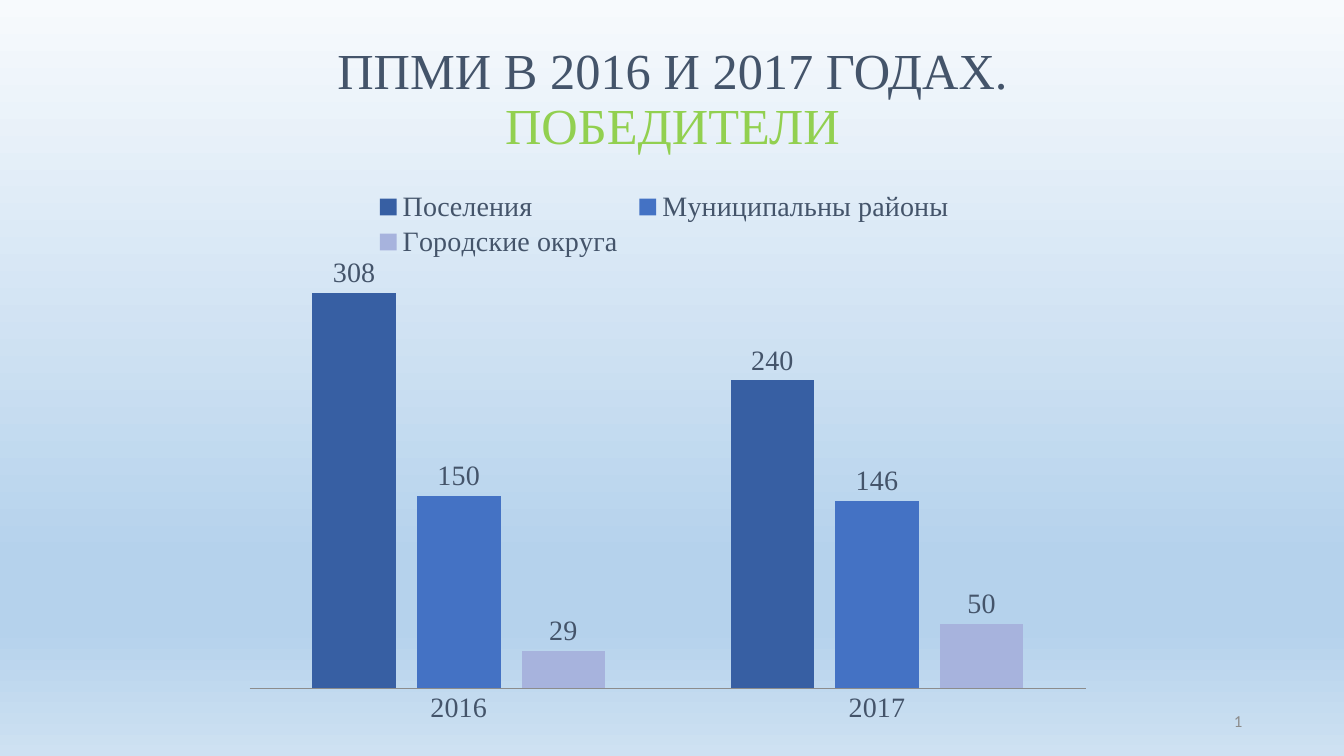
from pptx import Presentation
from pptx.chart.data import CategoryChartData
from pptx.dml.color import RGBColor
from pptx.enum.chart import XL_CHART_TYPE, XL_LABEL_POSITION, XL_LEGEND_POSITION, XL_TICK_MARK
from pptx.enum.text import MSO_ANCHOR, PP_ALIGN
from pptx.oxml import parse_xml
from pptx.oxml.ns import nsdecls, qn
from pptx.util import Inches, Pt

SERIF = "Times New Roman"
SLATE = "44546A"
BACKGROUND = [(0, "F7FAFD"), (74, "B5D2EC"), (83, "B5D2EC"), (100, "CEE1F2")]
YEARS = ["2016", "2017"]
WINNERS = [
    ("Поселения", (308, 240), "375FA3"),
    ("Муниципальны районы", (150, 146), "4472C4"),
    ("Городские округа", (29, 50), "A7B3DD"),
]


def rgb(color):
    return RGBColor.from_string(color)


def style_font(font, name, size, color):
    font.name = name
    font.size = Pt(size)
    font.color.rgb = rgb(color)


def paint_background(slide):
    fill = slide.background.fill
    fill.gradient()
    stops = "".join(
        f'<a:gs pos="{position * 1000}"><a:srgbClr val="{color}"/></a:gs>'
        for position, color in BACKGROUND
    )
    gradient = parse_xml(
        f'<a:gradFill {nsdecls("a")} rotWithShape="1"><a:gsLst>{stops}</a:gsLst>'
        '<a:lin ang="5400000" scaled="0"/></a:gradFill>'
    )
    default = slide.background._cSld.find(".//" + qn("a:gradFill"))
    default.getparent().replace(default, gradient)


def add_text_box(slide, left, top, width, height, anchor, align):
    """Add a wrapping text box and return its first paragraph."""
    box = slide.shapes.add_textbox(Inches(left), Inches(top), Inches(width), Inches(height))
    frame = box.text_frame
    frame.word_wrap = True
    frame.vertical_anchor = anchor
    paragraph = frame.paragraphs[0]
    paragraph.alignment = align
    return paragraph


def add_title(slide):
    title = add_text_box(slide, 1.72, 0.41, 9.9, 1.18, MSO_ANCHOR.BOTTOM, PP_ALIGN.CENTER)
    title.line_spacing = 0.9
    for words, color in (("ППМИ В 2016 И 2017 ГОДАХ. ", SLATE), ("ПОБЕДИТЕЛИ", "92D050")):
        run = title.add_run()
        run.text = words
        style_font(run.font, SERIF, 36, color)


def add_slide_number(slide):
    number = add_text_box(slide, 9.42, 6.95, 3, 0.4, MSO_ANCHOR.MIDDLE, PP_ALIGN.RIGHT)
    number._p.append(parse_xml(
        f'<a:fld {nsdecls("a")} id="{{B6F15528-21DE-4FAA-801E-634DDDAF4B2B}}" type="slidenum">'
        '<a:rPr lang="ru-RU" sz="1200"><a:solidFill><a:srgbClr val="8C8C8C"/></a:solidFill>'
        '<a:latin typeface="Calibri"/></a:rPr><a:t>2</a:t></a:fld>'
    ))


def set_layout(parent, index, target, x, y, w, h):
    """Fix a chart part at fractions of the chart's size."""
    for old in parent.findall(qn("c:layout")):
        parent.remove(old)
    inner = f'<c:layoutTarget val="{target}"/>' if target else ""
    parent.insert(index, parse_xml(
        f'<c:layout {nsdecls("c")}><c:manualLayout>{inner}'
        '<c:xMode val="edge"/><c:yMode val="edge"/>'
        f'<c:x val="{x}"/><c:y val="{y}"/><c:w val="{w}"/><c:h val="{h}"/>'
        '</c:manualLayout></c:layout>'
    ))


def add_winners_chart(slide):
    data = CategoryChartData()
    data.categories = YEARS
    for name, values, _ in WINNERS:
        data.add_series(name, values)
    chart = slide.shapes.add_chart(
        XL_CHART_TYPE.COLUMN_CLUSTERED,
        Inches(2.26), Inches(1.75), Inches(8.66), Inches(5.62), data,
    ).chart
    chart.has_title = False
    style_font(chart.font, SERIF, 20, SLATE)

    plot = chart.plots[0]
    plot.gap_width = 150
    plot.overlap = -25
    plot.vary_by_categories = False
    for series, (_, _, color) in zip(plot.series, WINNERS):
        series.format.fill.solid()
        series.format.fill.fore_color.rgb = rgb(color)
        labels = series.data_labels
        labels.show_value = True
        labels.position = XL_LABEL_POSITION.OUTSIDE_END
        style_font(labels.font, SERIF, 20, SLATE)

    year_axis = chart.category_axis
    year_axis.major_tick_mark = XL_TICK_MARK.NONE
    year_axis.format.line.color.rgb = rgb("8C8C8C")
    year_axis.format.line.width = Pt(0.75)
    style_font(year_axis.tick_labels.font, SERIF, 20, SLATE)
    value_axis = chart.value_axis
    value_axis.visible = False
    value_axis.has_major_gridlines = False
    value_axis.minimum_scale = 0
    value_axis.maximum_scale = 350

    chart.has_legend = True
    legend = chart.legend
    legend.position = XL_LEGEND_POSITION.TOP
    legend.include_in_layout = False
    style_font(legend.font, SERIF, 20, SLATE)
    set_layout(legend._element, 1, None, 0.16, 0.02, 0.68, 0.13)
    plot_area = chart._chartSpace.find(".//" + qn("c:plotArea"))
    set_layout(plot_area, 0, "inner", 0.025, 0.111, 0.958, 0.793)


def main():
    presentation = Presentation()
    presentation.slide_width = Inches(13.33)
    presentation.slide_height = Inches(7.5)
    slide = presentation.slides.add_slide(presentation.slide_layouts[6])
    paint_background(slide)
    add_title(slide)
    add_slide_number(slide)
    add_winners_chart(slide)
    presentation.save("out.pptx")


if __name__ == "__main__":
    main()
